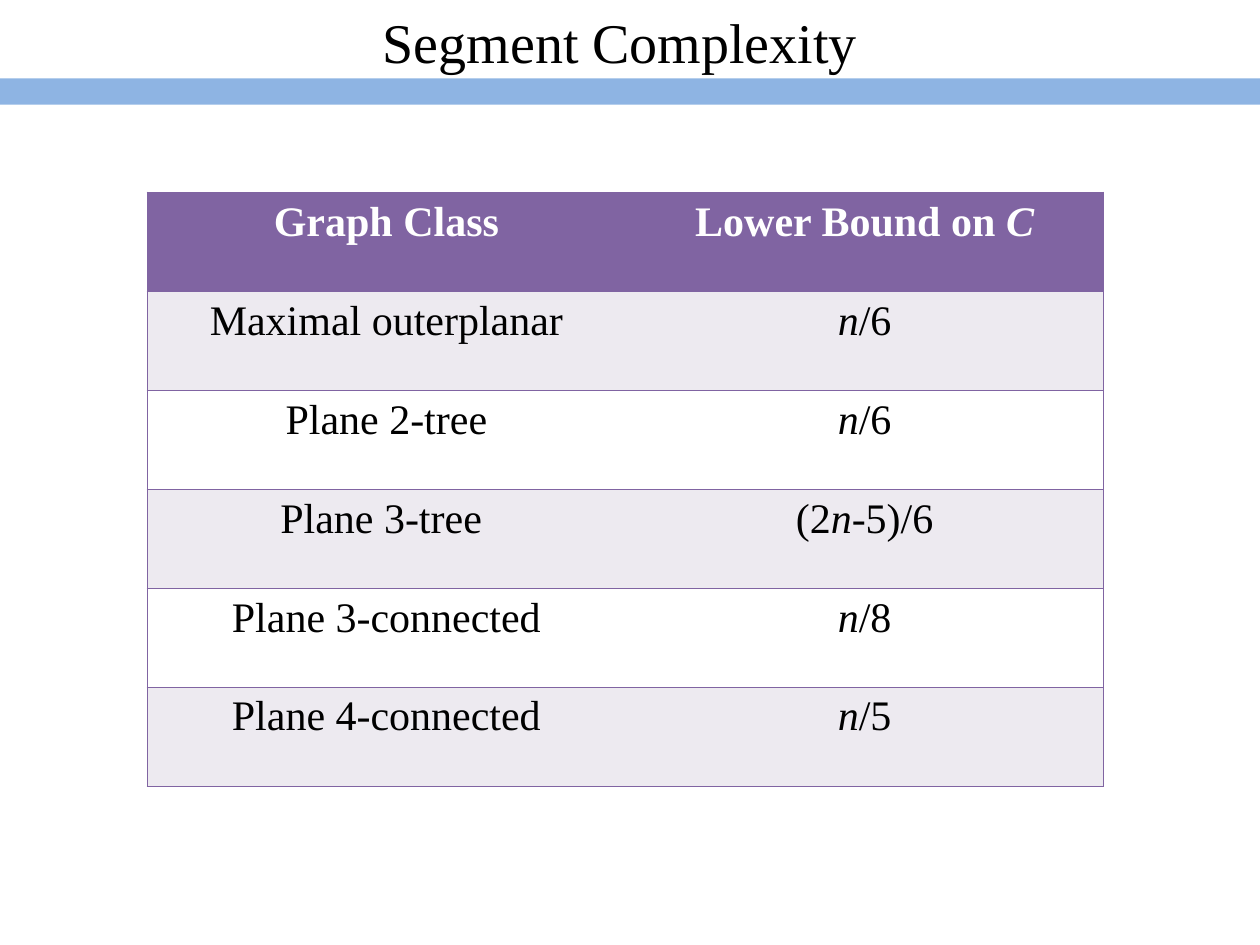
from lxml.etree import SubElement
from pptx import Presentation
from pptx.dml.color import RGBColor
from pptx.enum.shapes import MSO_SHAPE as Shape
from pptx.enum.text import MSO_ANCHOR as Anchor, MSO_AUTO_SIZE as AutoSize, PP_ALIGN as Align
from pptx.oxml.ns import qn
from pptx.util import Cm, Pt

HEADING = "Segment Complexity"
BOUNDS = [
    ("Graph Class", ["Lower Bound on ", "C"]),
    ("Maximal outerplanar", ["n", "/6"]),
    ("Plane 2-tree", ["n", "/6"]),
    ("Plane 3-tree ", ["(2", "n", "-5)/6"]),
    ("Plane 3-connected", ["n", "/8"]),
    ("Plane 4-connected", ["n", "/5"]),
]
VARIABLES = {"n", "C"}
PURPLE, LAVENDER, WHITE, BLACK, BLUE = "8064A2", "EDEAF0", "FFFFFF", "000000", "8EB4E3"
SLIDE_W, SLIDE_H = 25.4, 19.05
COLUMN_W, ROW_H = 9.64, 1.995


def paint(fill, colour):
    fill.solid()
    fill.fore_color.rgb = RGBColor.from_string(colour)


def write(frame, pieces, colour, **formats):
    paragraph = frame.paragraphs[0]
    paragraph.alignment = Align.CENTER
    for piece in pieces:
        run = paragraph.add_run()
        run.text = piece
        styles = {"name": "Times New Roman", "italic": piece in VARIABLES, **formats}
        for key, value in styles.items():
            setattr(run.font, key, value)
        paint(run.font.fill, colour)


def set_borders(cell, visible):
    properties = cell._tc.get_or_add_tcPr()
    for side in "LRTB":
        line = SubElement(properties, qn(f"a:ln{side}"), w=str(Pt(1)))
        if side in visible:
            solid = SubElement(line, qn("a:solidFill"))
            SubElement(solid, qn("a:srgbClr"), val=PURPLE)
        else:
            SubElement(line, qn("a:noFill"))


def add_heading(slide):
    heading = slide.shapes.title
    box = {"left": 1.07, "top": 0.2, "width": 22.86, "height": 1.27}
    for key, value in box.items():
        setattr(heading, key, Cm(value))
    frame = heading.text_frame
    frame.auto_size = AutoSize.NONE
    frame.vertical_anchor = Anchor.MIDDLE
    write(frame, [HEADING], BLACK, size=Pt(32), bold=False)


def add_band(slide):
    band = slide.shapes.add_shape(Shape.RECTANGLE, 0, Cm(1.58), Cm(SLIDE_W), Cm(0.53))
    band.shadow.inherit = False
    paint(band.fill, BLUE)
    band.line.fill.background()


def add_bounds(slide):
    bounds = slide.shapes.add_table(
        len(BOUNDS), 2, Cm(2.97), Cm(3.88), Cm(2 * COLUMN_W), Cm(len(BOUNDS) * ROW_H)
    ).table
    for row, (graph_class, bound) in enumerate(BOUNDS):
        bounds.rows[row].height = Cm(ROW_H)
        is_header = row == 0
        background = PURPLE if is_header else (WHITE, LAVENDER)[row % 2]
        for column, pieces in enumerate(([graph_class], bound)):
            cell = bounds.cell(row, column)
            set_borders(cell, "TB" + "LR"[column])
            paint(cell.fill, background)
            write(cell.text_frame, pieces, WHITE if is_header else BLACK,
                  size=Pt(24), bold=is_header)


def main():
    deck = Presentation()
    deck.slide_width, deck.slide_height = Cm(SLIDE_W), Cm(SLIDE_H)
    slide = deck.slides.add_slide(deck.slide_layouts.get_by_name("Title Only"))
    paint(slide.background.fill, WHITE)
    add_heading(slide)
    add_band(slide)
    add_bounds(slide)
    deck.save("out.pptx")


if __name__ == "__main__":
    main()
